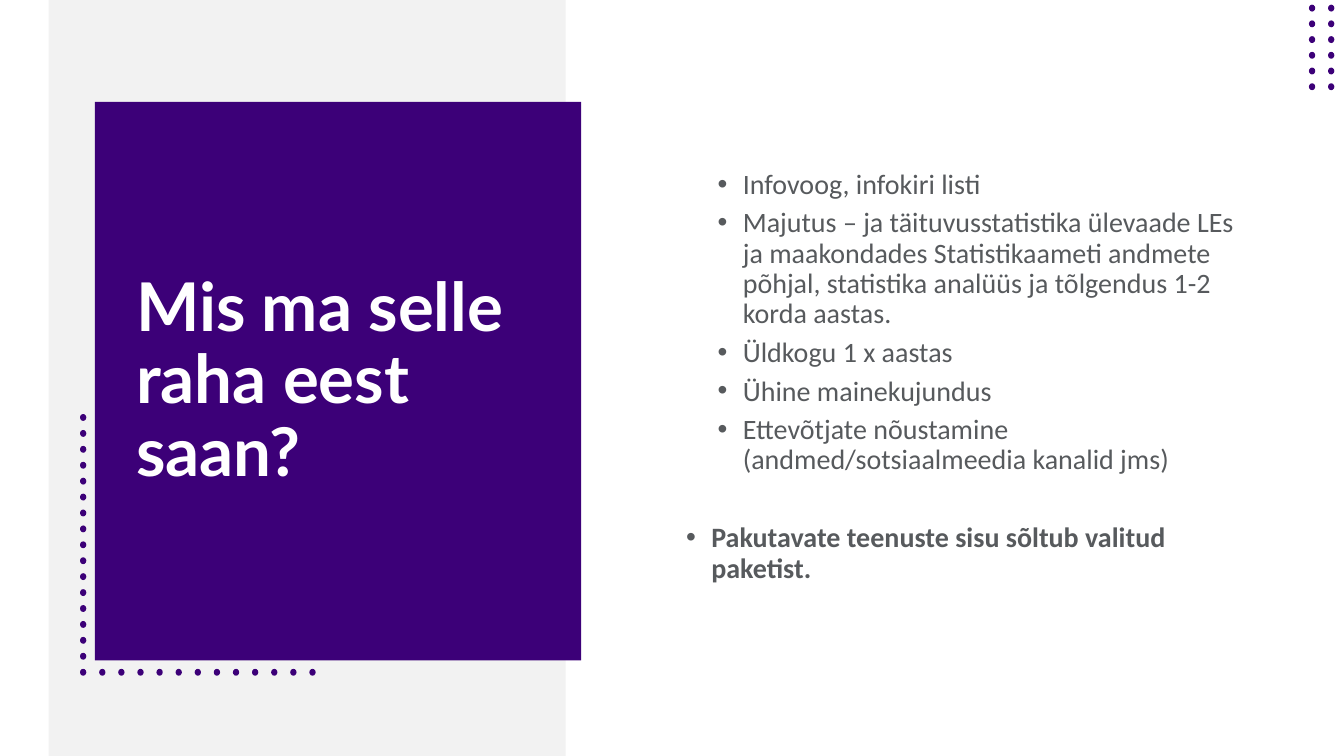
from lxml import etree
from pptx import Presentation
from pptx.dml.color import RGBColor
from pptx.enum.shapes import MSO_SHAPE as SHAPE
from pptx.enum.text import MSO_ANCHOR as ANCHOR, MSO_AUTO_SIZE as AUTOSIZE, PP_ALIGN as ALIGN
from pptx.oxml.ns import qn
from pptx.util import Pt

PURPLE = RGBColor(0x3C, 0x00, 0x78)
PALE_GREY = RGBColor(0xF2, 0xF2, 0xF2)
TEXT_GREY = RGBColor(0x57, 0x5A, 0x5D)
WHITE = RGBColor(0xFF, 0xFF, 0xFF)

TITLE = "Mis ma selle raha eest saan?"
BENEFITS = [
    "Infovoog, infokiri listi",
    "Majutus – ja täituvusstatistika ülevaade LEs ja maakondades Statistikaameti "
    "andmete põhjal, statistika analüüs ja tõlgendus 1-2 korda aastas.",
    "Üldkogu 1 x aastas",
    "Ühine mainekujundus",
    "Ettevõtjate nõustamine (andmed/sotsiaalmeedia kanalid jms)",
]
CONCLUSION = "Pakutavate teenuste sisu sõltub valitud paketist."

DOT_WIDTH, DOT_HEIGHT = 4.5, 4.9
DOT_STEP_X, DOT_STEP_Y = 13.65, 11.37


def add_filled(shapes, kind, x, y, w, h, color):
    shape = shapes.add_shape(kind, Pt(x), Pt(y), Pt(w), Pt(h))
    shape.shadow.inherit = False
    shape.fill.solid()
    shape.fill.fore_color.rgb = color
    shape.line.fill.background()


def add_dots(s, centers):
    group = s.shapes.add_group_shape()
    for x, y in centers:
        add_filled(group.shapes, SHAPE.OVAL, x - DOT_WIDTH / 2, y - DOT_HEIGHT / 2,
                   DOT_WIDTH, DOT_HEIGHT, PURPLE)


def write(p, text, color, **font):
    p.line_spacing = 0.9
    p.alignment = ALIGN.LEFT
    r = p.add_run()
    r.text = text
    r.font.color.rgb = color
    for name, value in font.items():
        setattr(r.font, name, value)


def set_bullet(p, indent):
    pPr = p._p.get_or_add_pPr()
    pPr.set("marL", str(Pt(indent)))
    pPr.set("indent", str(Pt(-18)))
    etree.SubElement(pPr, qn("a:buFont")).set("typeface", "Arial")
    etree.SubElement(pPr, qn("a:buChar")).set("char", "•")


def place_title(s):
    title = s.shapes.title
    places = {"left": 90, "top": 104.4, "width": 298, "height": 337}
    for name, value in places.items():
        setattr(title, name, Pt(value))
    tf = title.text_frame
    tf.auto_size = AUTOSIZE.NONE
    tf.word_wrap = True
    tf.vertical_anchor = ANCHOR.MIDDLE
    write(tf.paragraphs[0], TITLE, WHITE, name="Lato", size=Pt(48), bold=True)
    # Bring the title in front of the panels
    title.element.getparent().append(title.element)


def add_benefits(s):
    tf = s.shapes.add_textbox(Pt(465), Pt(118), Pt(437.8), Pt(310)).text_frame
    tf.word_wrap = True
    for i, text in enumerate(BENEFITS + [CONCLUSION]):
        p = tf.paragraphs[0] if i == 0 else tf.add_paragraph()
        last = text == CONCLUSION
        p.space_before = Pt(28 if last else 0)
        p.space_after = Pt(6)
        write(p, text, TEXT_GREY, name="Calibri", size=Pt(20), bold=last)
        set_bullet(p, 36 if last else 58.5)


def main():
    prs = Presentation()
    prs.slide_width, prs.slide_height = Pt(960), Pt(540)
    s = prs.slides.add_slide(prs.slide_layouts[5])

    # Panels
    add_filled(s.shapes, SHAPE.RECTANGLE, 34.8, 0, 369.2, 540, PALE_GREY)
    add_filled(s.shapes, SHAPE.RECTANGLE, 67.7, 72.7, 347.5, 399, PURPLE)

    # Dotted corner beside the title panel
    column = [(59.4, 298.2 + DOT_STEP_Y * i) for i in range(16)]
    row = [(59.4 + DOT_STEP_X * i, 480.2) for i in range(13)]
    add_dots(s, column + row)

    # Title
    place_title(s)

    # Dotted block at the top right
    add_dots(s, [(937.2 + DOT_STEP_X * col, 5.8 + 11.23 * line)
                 for line in range(6) for col in range(2)])

    # Bulleted list
    add_benefits(s)
    prs.save("out.pptx")


if __name__ == "__main__":
    main()
